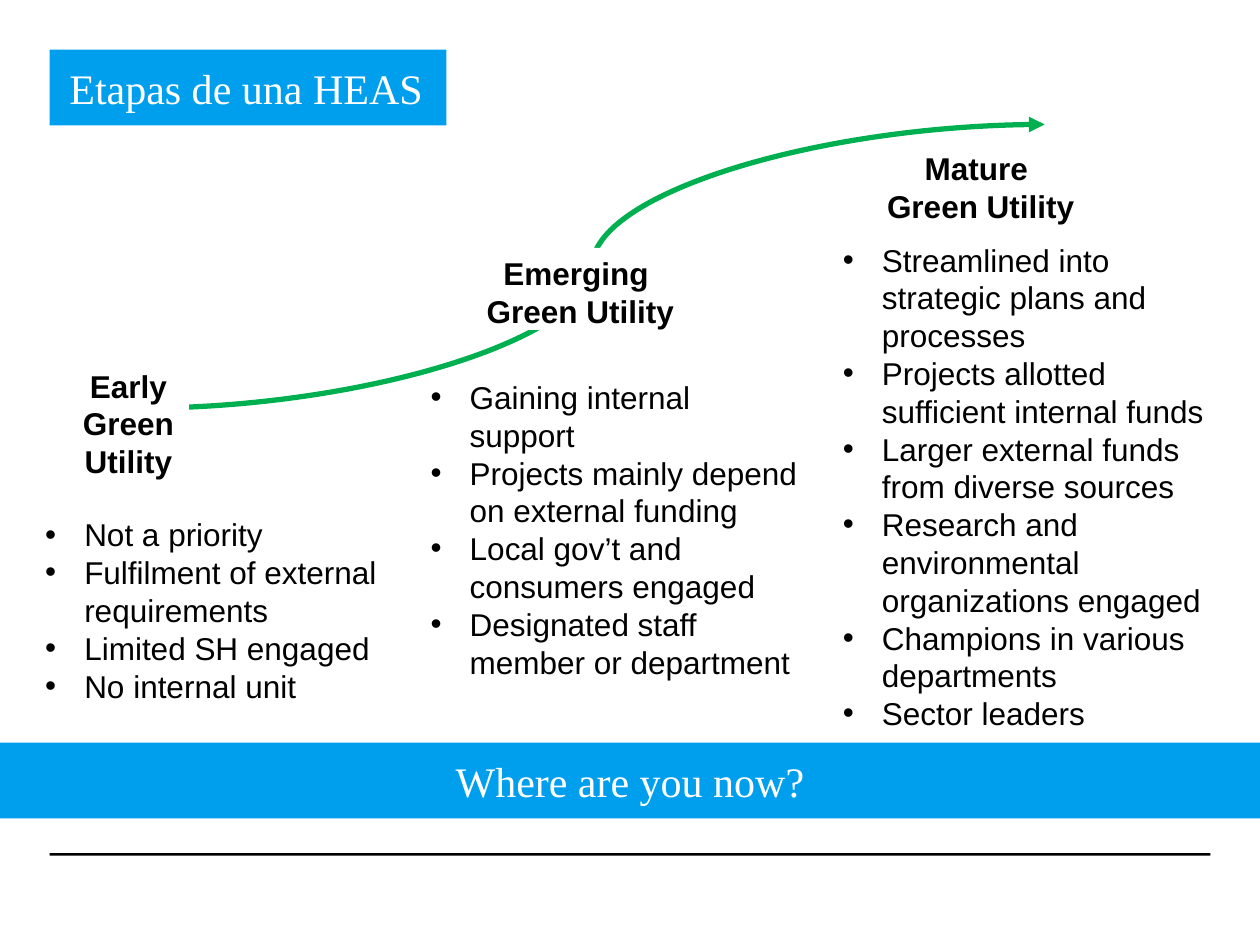
from lxml import etree
from pptx import Presentation
from pptx.dml.color import RGBColor
from pptx.enum.shapes import MSO_CONNECTOR, MSO_SHAPE
from pptx.enum.text import MSO_ANCHOR, PP_ALIGN
from pptx.oxml.ns import qn
from pptx.util import Cm, Pt

COLORS = {"blue": "009FEE", "green": "00B050", "black": "000000", "white": "FFFFFF"}
INDENT = Cm(0.79)

deck = Presentation()
deck.slide_width, deck.slide_height = Cm(25.4), Cm(19.05)
slide = deck.slides.add_slide(deck.slide_layouts[6])


def add_text(text, box, fill=None, font="Arial", size=18, color="black", bold=False,
             align=PP_ALIGN.LEFT, margins=(0.25, 0.13, 0.25, 0.13), wrap=True, bullets=False):
    """Place text in a box (left, top, width, height in cm), one paragraph per line."""
    place = [Cm(length) for length in box]
    if fill:
        shape = slide.shapes.add_shape(MSO_SHAPE.RECTANGLE, *place)
        shape.shadow.inherit = False
        shape.fill.solid()
        shape.fill.fore_color.rgb = RGBColor.from_string(COLORS[fill])
        shape.line.fill.background()
    else:
        shape = slide.shapes.add_textbox(*place)
    frame = shape.text_frame
    frame.word_wrap = wrap
    frame.vertical_anchor = MSO_ANCHOR.TOP
    (frame.margin_left, frame.margin_top,
     frame.margin_right, frame.margin_bottom) = [Cm(margin) for margin in margins]
    frame.text = text
    for paragraph in frame.paragraphs:
        paragraph.alignment = align
        if bullets:
            props = paragraph._p.get_or_add_pPr()
            props.set("marL", str(INDENT))
            props.set("indent", str(-INDENT))
            etree.SubElement(props, qn("a:buFont")).set("typeface", "Arial")
            etree.SubElement(props, qn("a:buChar")).set("char", "•")
        for run in paragraph.runs:
            run.font.name = font
            run.font.size = Pt(size)
            run.font.bold = bold
            run.font.color.rgb = RGBColor.from_string(COLORS[color])


# Footer rule
rule = slide.shapes.add_shape(MSO_SHAPE.RECTANGLE, Cm(1), Cm(17.2), Cm(23.4), Cm(0.05))
rule.shadow.inherit = False
rule.fill.solid()
rule.fill.fore_color.rgb = RGBColor.from_string(COLORS["black"])
rule.line.fill.background()

# Title and closing question
banner = dict(fill="blue", font="Times New Roman", size=24, color="white",
              margins=(0.4, 0.27, 0.4, 0.23))
add_text("Etapas de una HEAS", (1, 1, 8, 1.53), wrap=False, **banner)
add_text("Where are you now?", (0, 14.97, 25.4, 1.53), align=PP_ALIGN.CENTER, **banner)

# Growth curve, running behind the first two stage names
growth = slide.shapes.add_connector(MSO_CONNECTOR.CURVE, Cm(2.82), Cm(8.23), Cm(21.06), Cm(2.51))
growth.line.color.rgb = RGBColor.from_string(COLORS["green"])
growth.line.width = Pt(3)
etree.SubElement(growth.line._get_or_add_ln(), qn("a:tailEnd")).set("type", "triangle")
etree.SubElement(growth._element.spPr, qn("a:effectLst"))

# Stages: name, its box and fill, then traits and their box
stages = [
    ("Early Green Utility", (1.37, 7.26, 2.44, 1.93), "white",
     ["Not a priority", "Fulfilment of external requirements",
      "Limited SH engaged", "No internal unit"],
     (0.66, 10.26, 7.82, 4.11)),
    ("Emerging \nGreen Utility", (8.97, 5, 5.46, 1.65), "white",
     ["Gaining internal support", "Projects mainly depend on external funding",
      "Local gov’t and consumers engaged", "Designated staff member or department"],
     (8.43, 7.49, 8, 6.4)),
    ("Mature \nGreen Utility", (17.04, 2.87, 5.46, 1.65), None,
     ["Streamlined into strategic plans and processes",
      "Projects allotted sufficient internal funds",
      "Larger external funds from diverse sources",
      "Research and environmental organizations engaged",
      "Champions in various departments", "Sector leaders"],
     (16.74, 4.72, 8.36, 10.26)),
]
for name, name_box, name_fill, traits, traits_box in stages:
    add_text(name, name_box, fill=name_fill, bold=True, align=PP_ALIGN.CENTER)
    add_text("\n".join(traits), traits_box, bullets=True)

deck.save("out.pptx")
